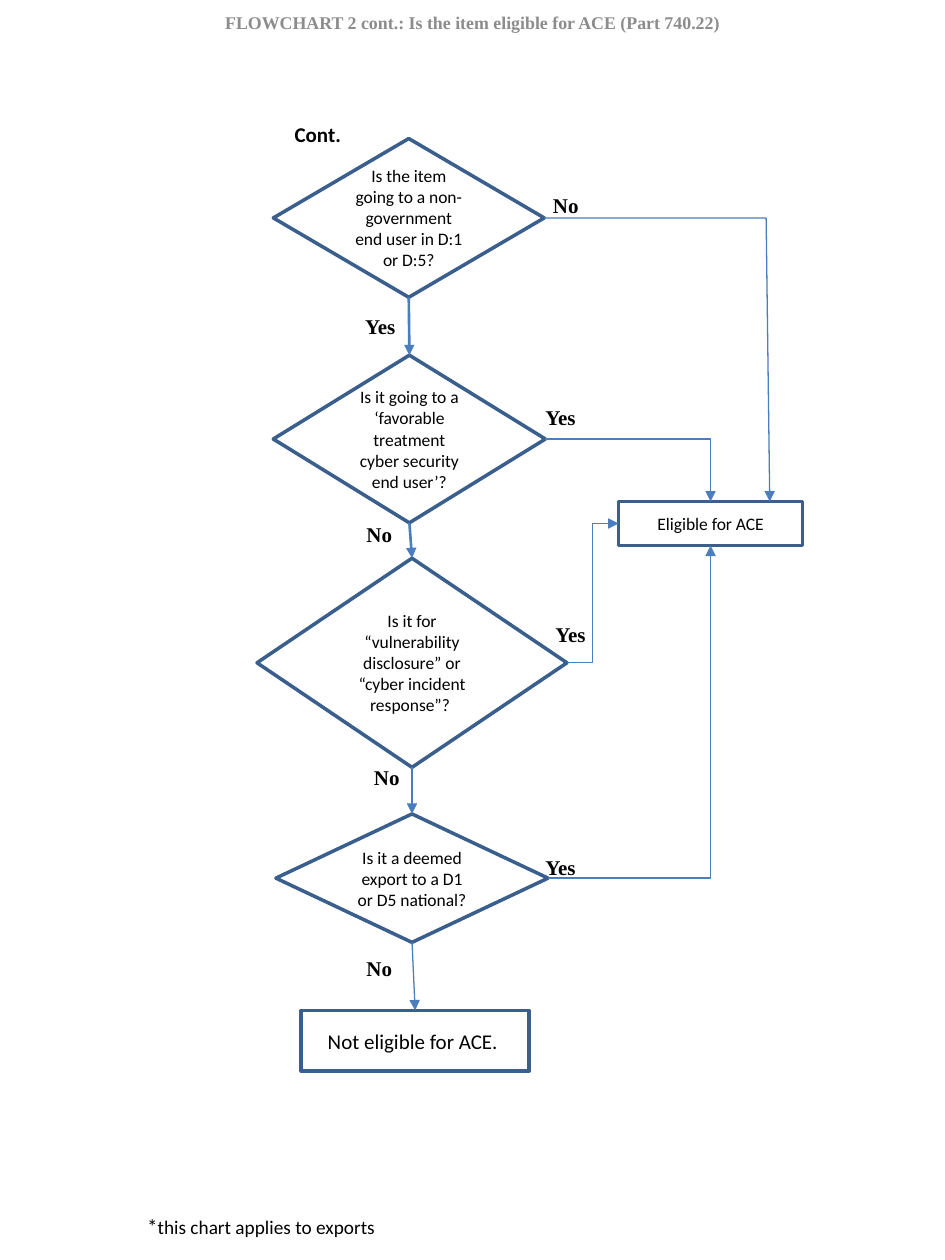
from lxml.etree import SubElement
from pptx import Presentation
from pptx.dml.color import RGBColor
from pptx.enum.shapes import MSO_CONNECTOR, MSO_SHAPE
from pptx.enum.text import MSO_ANCHOR, PP_ALIGN
from pptx.oxml.ns import qn
from pptx.util import Pt

HUES = {"edge": "3A5F8C", "link": "4B7EBC", "ink": "000000", "title": "8C8C8C"}
SANS, SERIF = "Calibri", "Times New Roman"
TOP, LEFT, BOTTOM, RIGHT = range(4)

# name: (preset, left, top, width, height, size, text)
NODES = {
    "user": (MSO_SHAPE.DIAMOND, 156.2, 79.2, 154.8, 90.7, 10,
             "Is the item going to a non-government end user in D:1 or D:5?"),
    "cyber": (MSO_SHAPE.DIAMOND, 156.2, 203, 155.5, 95.8, 10,
              "Is it going to a ‘favorable treatment cyber security end user’?"),
    "response": (MSO_SHAPE.DIAMOND, 146.9, 319, 177.1, 119.5, 10,
                 "Is it for “vulnerability disclosure” or “cyber incident response”? "),
    "deemed": (MSO_SHAPE.DIAMOND, 157.7, 465.1, 155.5, 73.4, 10,
               "Is it a deemed export to a D1 or D5 national?"),
    "barred": (MSO_SHAPE.RECTANGLE, 172.1, 577.4, 130.3, 34.6, 12,
               "Not eligible for ACE. "),
    "eligible": (MSO_SHAPE.RECTANGLE, 353.5, 286.6, 105.1, 25.2, 10,
                 "Eligible for ACE"),
}
# preset, from (node, side), to (node, side), weight
LINKS = [
    ("line", ("user", BOTTOM), ("cyber", TOP), 1.5),
    ("line", ("cyber", BOTTOM), ("response", TOP), 1.5),
    ("line", ("response", BOTTOM), ("deemed", TOP), 0.75),
    ("line", ("deemed", BOTTOM), ("barred", TOP), 0.75),
    ("bentConnector2", ("cyber", RIGHT), ("eligible", TOP), 0.75),
    ("bentConnector3", ("response", RIGHT), ("eligible", LEFT), 0.75),
    ("bentConnector2", ("deemed", RIGHT), ("eligible", BOTTOM), 0.75),
]
CORNER, DROP = (437.8, 124.6), (439.9, 286.6)
# text, left, top
ANSWERS = [
    ("No", 308.9, 106.6), ("Yes", 201.6, 175.7), ("Yes", 304.6, 227.5),
    ("No", 202.3, 294.5), ("Yes", 310.3, 351.4), ("No", 206.6, 433.4),
    ("Yes", 304.6, 484.6), ("No", 202.3, 542.2),
]
WIDTHS = {"No": 29.5, "Yes": 31.7}
TITLE = "FLOWCHART 2 cont.: Is the item eligible for ACE (Part 740.22)"
NOTE = [("*", 12), ("this chart applies to exports", 11)]


def tint(name):
    return RGBColor.from_string(HUES[name])


def write(frame, runs, face, bold=False, hue="ink", align=PP_ALIGN.LEFT):
    para = frame.paragraphs[0]
    para.alignment = align
    for text, size in runs:
        run = para.add_run()
        run.text = text
        run.font.name, run.font.size, run.font.bold = face, Pt(size), bold
        run.font.color.rgb = tint(hue)


def add_text(place, runs, face, wrap=False, **look):
    box = slide.shapes.add_textbox(*map(Pt, place))
    box.text_frame.word_wrap = wrap
    write(box.text_frame, runs, face, **look)


def add_node(kind, left, top, width, height, size, text):
    node = slide.shapes.add_shape(kind, Pt(left), Pt(top), Pt(width), Pt(height))
    node.shadow.inherit = False
    node.fill.background()
    node.line.color.rgb = tint("edge")
    node.line.width = Pt(2)
    frame = node.text_frame
    frame.word_wrap = True
    frame.vertical_anchor = MSO_ANCHOR.MIDDLE
    write(frame, [(text, size)], SANS, align=PP_ALIGN.CENTER)
    return node


def add_link(preset, start, end, weight, head=True):
    """Draw a connector; each end is a point or a (node name, side) pair."""
    bent = preset != "line"
    kind = MSO_CONNECTOR.ELBOW if bent else MSO_CONNECTOR.STRAIGHT
    ends = [(0, 0) if p[0] in nodes else p for p in (start, end)]
    link = slide.shapes.add_connector(kind, *(Pt(v) for p in ends for v in p))
    for point, join in ((start, link.begin_connect), (end, link.end_connect)):
        if point[0] in nodes:
            join(nodes[point[0]], point[1])
    link.line.color.rgb = tint("link")
    link.line.width = Pt(weight)
    props = link._element.spPr
    if bent:
        props.find(qn("a:prstGeom")).set("prst", preset)
    if head:
        SubElement(props.find(qn("a:ln")), qn("a:tailEnd"), type="triangle")
    SubElement(props, qn("a:effectLst"))


deck = Presentation()
deck.slide_width, deck.slide_height = Pt(540), Pt(720)
slide = deck.slides.add_slide(deck.slide_layouts[6])

add_text((0, 2.9, 540, 26.6), [(TITLE, 10.2)], SERIF, wrap=True,
         bold=True, hue="title", align=PP_ALIGN.CENTER)
add_text((161.3, 66.2, 67, 21.6), [("Cont.", 12)], SANS, wrap=True, bold=True)
nodes = {name: add_node(*node) for name, node in NODES.items()}
for link in LINKS:
    add_link(*link)
add_link("line", ("user", RIGHT), CORNER, 0.75, head=False)
add_link("line", CORNER, DROP, 0.75)
for text, left, top in ANSWERS:
    add_text((left, top, WIDTHS[text], 21.6), [(text, 12)], SERIF, bold=True)
add_text((77, 689.8, 145.4, 21.6), NOTE, SANS)

deck.save("out.pptx")
